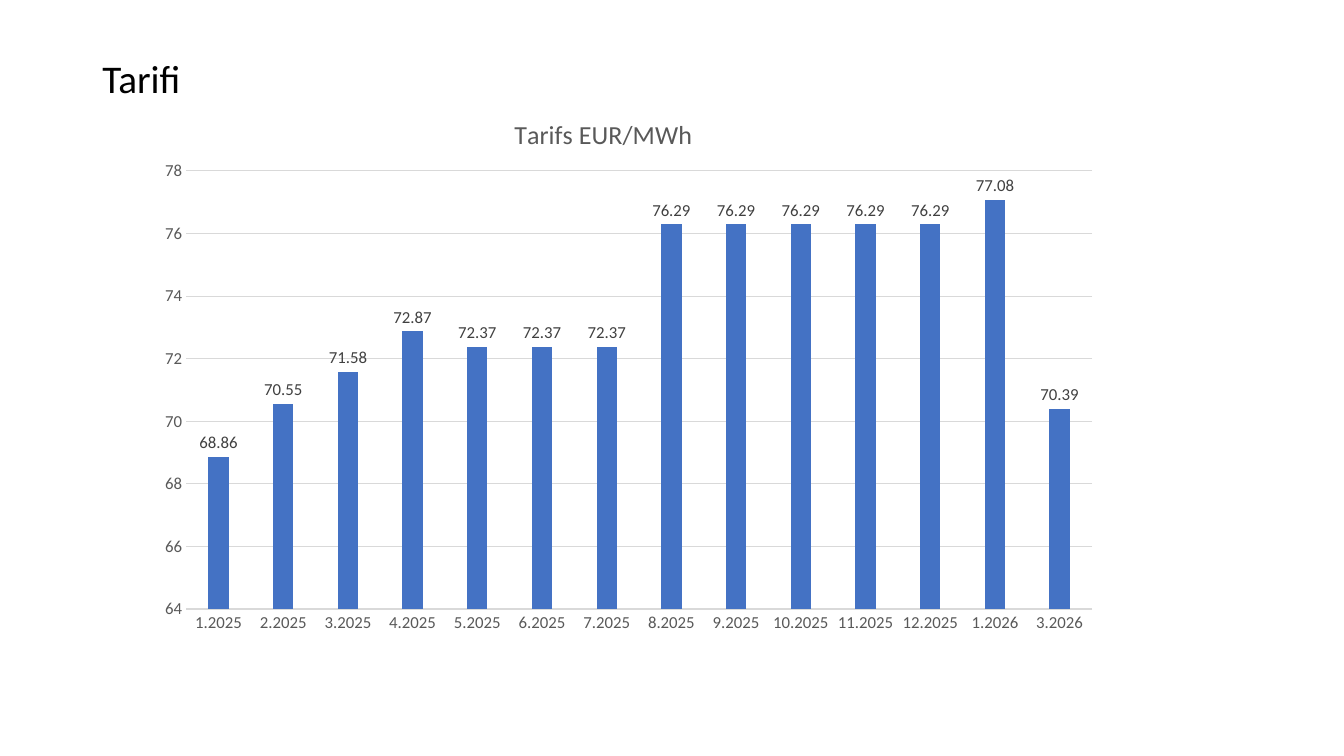
"""Build the tariff slide with its monthly column chart."""
from lxml import etree
from pptx import Presentation
from pptx.chart.data import CategoryChartData
from pptx.dml.color import RGBColor
from pptx.enum.chart import XL_CHART_TYPE as ChartType
from pptx.enum.chart import XL_LABEL_POSITION as LabelPosition
from pptx.enum.chart import XL_TICK_MARK as TickMark
from pptx.enum.text import MSO_ANCHOR as Anchor
from pptx.oxml.ns import qn
from pptx.util import Pt

HEADING = "Tarifi"
CHART_TITLE = "Tarifs EUR/MWh"
TARIFFS = [
    ("1.2025", 68.86), ("2.2025", 70.55), ("3.2025", 71.58), ("4.2025", 72.87),
    ("5.2025", 72.37), ("6.2025", 72.37), ("7.2025", 72.37), ("8.2025", 76.29),
    ("9.2025", 76.29), ("10.2025", 76.29), ("11.2025", 76.29), ("12.2025", 76.29),
    ("1.2026", 77.08), ("3.2026", 70.39),
]
SLIDE_SIZE = (960, 540)
HEADING_BOX = (66, 28.8, 828, 57.6)
CHART_BOX = (82, 67, 698.4, 427)
PLOT_AREA = {"x": 0.073, "y": 0.129, "w": 0.927, "h": 0.733}
FONT = "Calibri"
BLACK, GREY, DARK, RULE, BLUE = "000000", "595959", "404040", "D9D9D9", "4472C4"


def color(hex_value):
    return RGBColor.from_string(hex_value)


def style_font(font, size, hex_value):
    font.name = FONT
    font.size = Pt(size)
    font.bold = False
    font.color.rgb = color(hex_value)


def style_line(line):
    line.color.rgb = color(RULE)
    line.width = Pt(0.75)


def add_heading(slide):
    text_frame = slide.shapes.add_textbox(*map(Pt, HEADING_BOX)).text_frame
    text_frame.word_wrap = True
    text_frame.vertical_anchor = Anchor.MIDDLE
    text_frame.text = HEADING
    paragraph = text_frame.paragraphs[0]
    paragraph.line_spacing = 0.9
    style_font(paragraph.runs[0].font, 28, BLACK)


def place_plot(chart):
    plot_area = chart.element.find(".//" + qn("c:plotArea"))
    for layout in plot_area.findall(qn("c:layout")):
        plot_area.remove(layout)
    layout = etree.Element(qn("c:layout"))
    plot_area.insert(0, layout)
    manual = etree.SubElement(layout, qn("c:manualLayout"))
    settings = {"layoutTarget": "inner", "xMode": "edge", "yMode": "edge", **PLOT_AREA}
    for name, value in settings.items():
        etree.SubElement(manual, qn(f"c:{name}")).set("val", str(value))


def style_axes(chart):
    for axis in (chart.category_axis, chart.value_axis):
        axis.major_tick_mark = axis.minor_tick_mark = TickMark.NONE
        style_font(axis.tick_labels.font, 12, GREY)
    style_line(chart.category_axis.format.line)
    value_axis = chart.value_axis
    value_axis.minimum_scale, value_axis.maximum_scale = 64, 78
    value_axis.major_unit = 2
    value_axis.format.line.fill.background()
    value_axis.has_major_gridlines = True
    style_line(value_axis.major_gridlines.format.line)


def style_columns(plot):
    plot.gap_width, plot.overlap = 219, -27
    plot.vary_by_categories = False
    fill = plot.series[0].format.fill
    fill.solid()
    fill.fore_color.rgb = color(BLUE)
    labels = plot.series[0].data_labels
    labels.show_value = True
    labels.position = LabelPosition.OUTSIDE_END
    style_font(labels.font, 12, DARK)


def add_tariff_chart(slide):
    data = CategoryChartData()
    months, prices = zip(*TARIFFS)
    data.categories = months
    data.add_series(CHART_TITLE, prices)
    chart = slide.shapes.add_chart(
        ChartType.COLUMN_CLUSTERED, *map(Pt, CHART_BOX), data).chart
    style_font(chart.font, 10, BLACK)
    chart.has_legend = False
    chart.has_title = True
    title = chart.chart_title
    title.include_in_layout = False
    title.text_frame.text = CHART_TITLE
    style_font(title.text_frame.paragraphs[0].runs[0].font, 18.6, GREY)
    place_plot(chart)
    style_axes(chart)
    style_columns(chart.plots[0])


def main():
    presentation = Presentation()
    presentation.slide_width, presentation.slide_height = map(Pt, SLIDE_SIZE)
    slide = presentation.slides.add_slide(presentation.slide_layouts[6])
    add_heading(slide)
    add_tariff_chart(slide)
    presentation.save("out.pptx")


if __name__ == "__main__":
    main()
